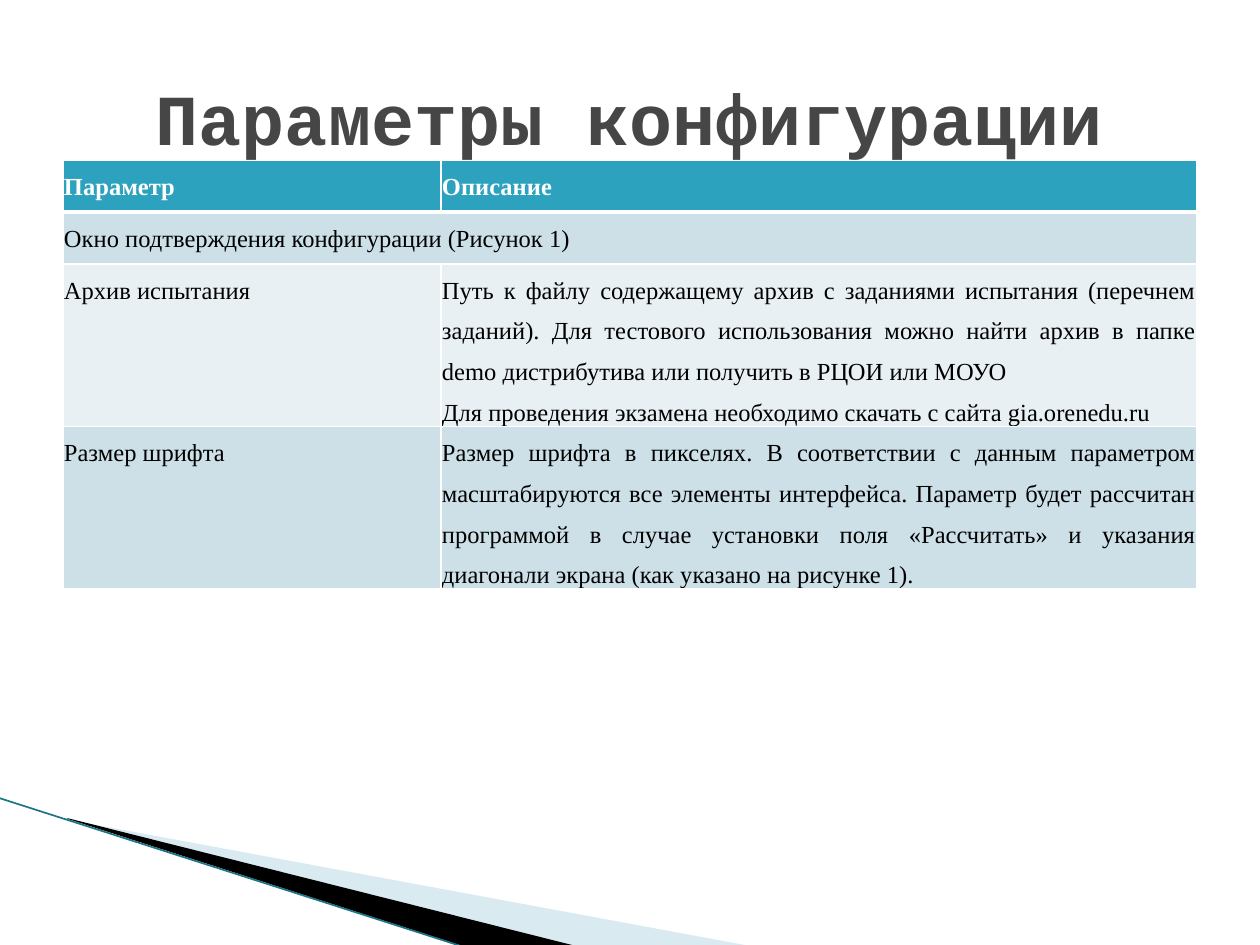
import pptx
import pptx.dml.color
import pptx.enum.shapes
import pptx.enum.text
import pptx.oxml.ns
import pptx.util
from lxml import etree

RGBColor = pptx.dml.color.RGBColor
Align = pptx.enum.text.PP_ALIGN

EMU_PER_PX = 914400 // 126
WHITE = RGBColor(0xFF, 0xFF, 0xFF)
BLACK = RGBColor(0x00, 0x00, 0x00)
TITLE_GREY = RGBColor(0x46, 0x46, 0x46)
HEADER_TEAL = RGBColor(0x2D, 0xA2, 0xBF)
BAND_DARK = RGBColor(0xCD, 0xE0, 0xE8)
BAND_LIGHT = RGBColor(0xE8, 0xF0, 0xF4)
WEDGE_BLUE = RGBColor(0xA0, 0xCB, 0xDC)
EDGE_TEAL = RGBColor(0x1B, 0x75, 0x87)

COLUMN_WIDTHS = (378, 756)
ROW_HEIGHTS = (52, 52, 162, 162)
ROW_FILLS = (HEADER_TEAL, BAND_DARK, BAND_LIGHT, BAND_DARK)
PARAMETERS = (
    (("Параметр",), ("Описание",)),
    (("Окно подтверждения конфигурации (Рисунок 1)",),),
    (
        ("Архив испытания",),
        (
            "Путь к файлу содержащему архив с заданиями испытания (перечнем "
            "заданий). Для тестового использования можно найти архив в папке "
            "demo дистрибутива или получить в РЦОИ или МОУО",
            "Для проведения экзамена необходимо скачать с сайта gia.orenedu.ru",
        ),
    ),
    (
        ("Размер шрифта",),
        (
            "Размер шрифта в пикселях. В соответствии с данным параметром "
            "масштабируются все элементы интерфейса. Параметр будет рассчитан "
            "программой в случае установки поля «Рассчитать» и указания "
            "диагонали экрана (как указано на рисунке 1).",
        ),
    ),
)


def px(length):
    return pptx.util.Emu(length * EMU_PER_PX)


def add_child(parent, tag, **attributes):
    return etree.SubElement(parent, pptx.oxml.ns.qn(tag), **attributes)


def style_paragraph(paragraph, font_name, size, color, bold, alignment):
    paragraph.alignment = alignment
    paragraph.font.name = font_name
    paragraph.font.size = pptx.util.Pt(size)
    paragraph.font.color.rgb = color
    paragraph.font.bold = bold


def add_wedge(slide, points, color, opacity=100):
    corners = [(px(x), px(y)) for x, y in points]
    builder = slide.shapes.build_freeform(*corners[0])
    builder.add_line_segments(corners[1:], close=True)
    wedge = builder.convert_to_shape()
    wedge.shadow.inherit = False
    wedge.line.fill.background()
    wedge.fill.solid()
    wedge.fill.fore_color.rgb = color
    if opacity < 100:
        swatch = wedge.fill._xPr.find(".//" + pptx.oxml.ns.qn("a:srgbClr"))
        add_child(swatch, "a:alpha", val=str(opacity * 1000))


def add_edge(slide, x1, y1, x2, y2):
    edge = slide.shapes.add_connector(
        pptx.enum.shapes.MSO_CONNECTOR.STRAIGHT, px(x1), px(y1), px(x2), px(y2)
    )
    edge.line.color.rgb = EDGE_TEAL
    edge.line.width = pptx.util.Pt(0.95)
    add_child(edge._element.spPr, "a:effectLst")


def set_borders(cell, top, bottom):
    properties = cell._tc.get_or_add_tcPr()
    for side, points in (("L", 1), ("R", 1), ("T", top), ("B", bottom)):
        border = add_child(properties, f"a:ln{side}", w=str(pptx.util.Pt(points)))
        add_child(add_child(border, "a:solidFill"), "a:srgbClr", val=str(WHITE))


def fill_cell(cell, texts, row_index):
    is_header = row_index == 0
    set_borders(cell, 3 if row_index == 1 else 1, 3 if is_header else 1)
    cell.fill.solid()
    cell.fill.fore_color.rgb = ROW_FILLS[row_index]
    cell.margin_left = cell.margin_right = px(1)
    cell.margin_top = cell.margin_bottom = 0
    cell.text = "\n".join(texts)
    for paragraph in cell.text_frame.paragraphs:
        paragraph.line_spacing = 1.5
        style_paragraph(paragraph, "Times New Roman", 14,
                        WHITE if is_header else BLACK, is_header, Align.JUSTIFY)


def add_parameter_table(slide):
    table = slide.shapes.add_table(
        len(ROW_HEIGHTS), len(COLUMN_WIDTHS), px(63), px(160),
        px(sum(COLUMN_WIDTHS)), px(sum(ROW_HEIGHTS))
    ).table
    for column, width in zip(table.columns, COLUMN_WIDTHS):
        column.width = px(width)
    for row_index, (height, entries) in enumerate(zip(ROW_HEIGHTS, PARAMETERS)):
        table.rows[row_index].height = px(height)
        if len(entries) == 1:
            table.cell(row_index, 0).merge(table.cell(row_index, 1))
        for column_index, texts in enumerate(entries):
            fill_cell(table.cell(row_index, column_index), texts, row_index)


def add_title(slide, text):
    frame = slide.shapes.add_textbox(px(63), px(38), px(1134), px(158)).text_frame
    frame.word_wrap = True
    frame.vertical_anchor = pptx.enum.text.MSO_ANCHOR.MIDDLE
    frame.text = text
    style_paragraph(frame.paragraphs[0], "Courier New", 41, TITLE_GREY, True, Align.CENTER)


def main():
    presentation = pptx.Presentation()
    presentation.slide_width = pptx.util.Inches(10)
    presentation.slide_height = pptx.util.Inches(7.5)
    slide = presentation.slides.add_slide(presentation.slide_layouts[6])
    add_wedge(slide, ((69, 820), (750, 946), (575, 946), (69, 819)), WEDGE_BLUE, 40)
    add_wedge(slide, ((67, 818), (576, 946), (469, 948), (68, 819)), BLACK)
    add_edge(slide, -1, 798, 467, 948)
    add_parameter_table(slide)
    add_title(slide, "Параметры конфигурации")
    presentation.save("out.pptx")


if __name__ == "__main__":
    main()
